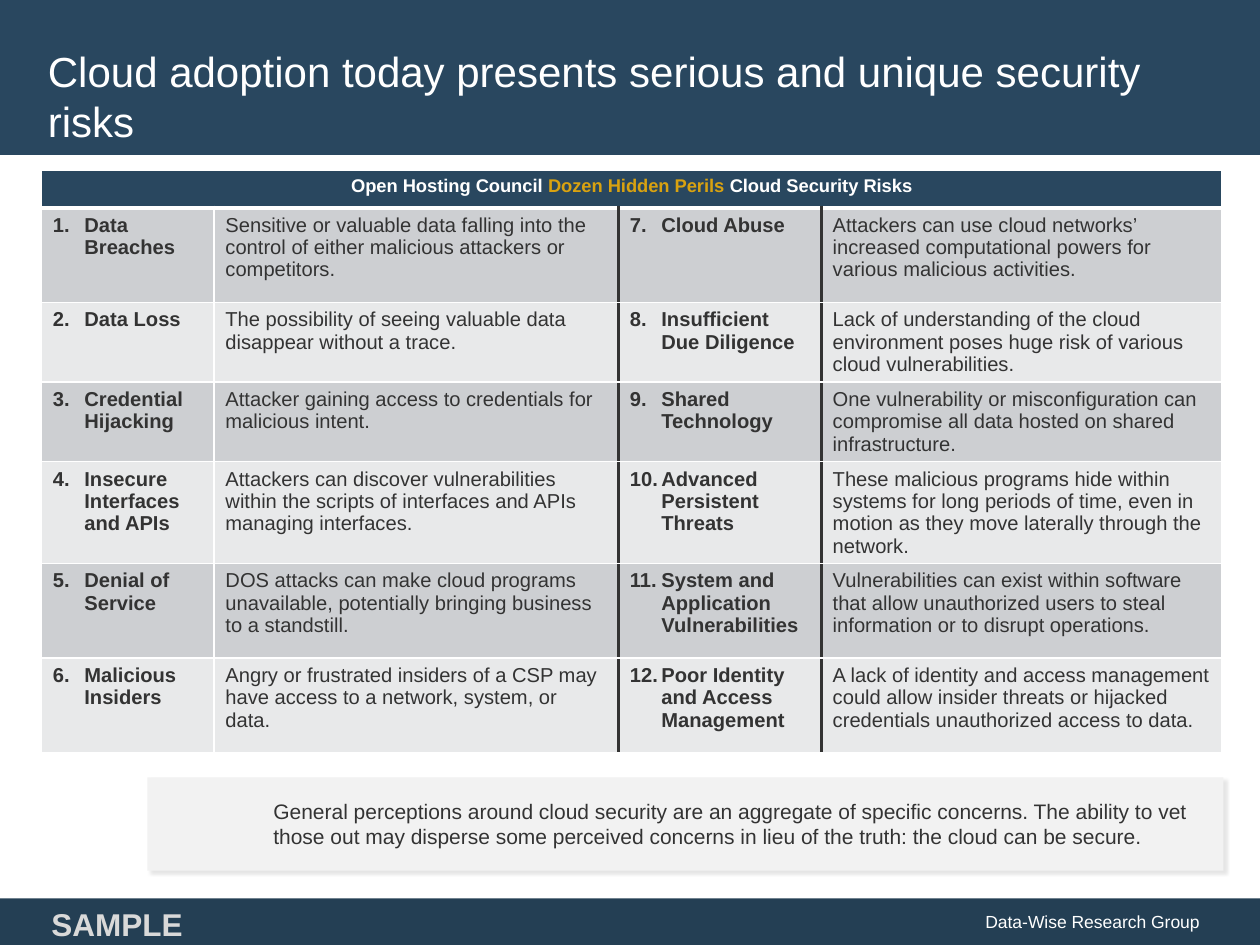
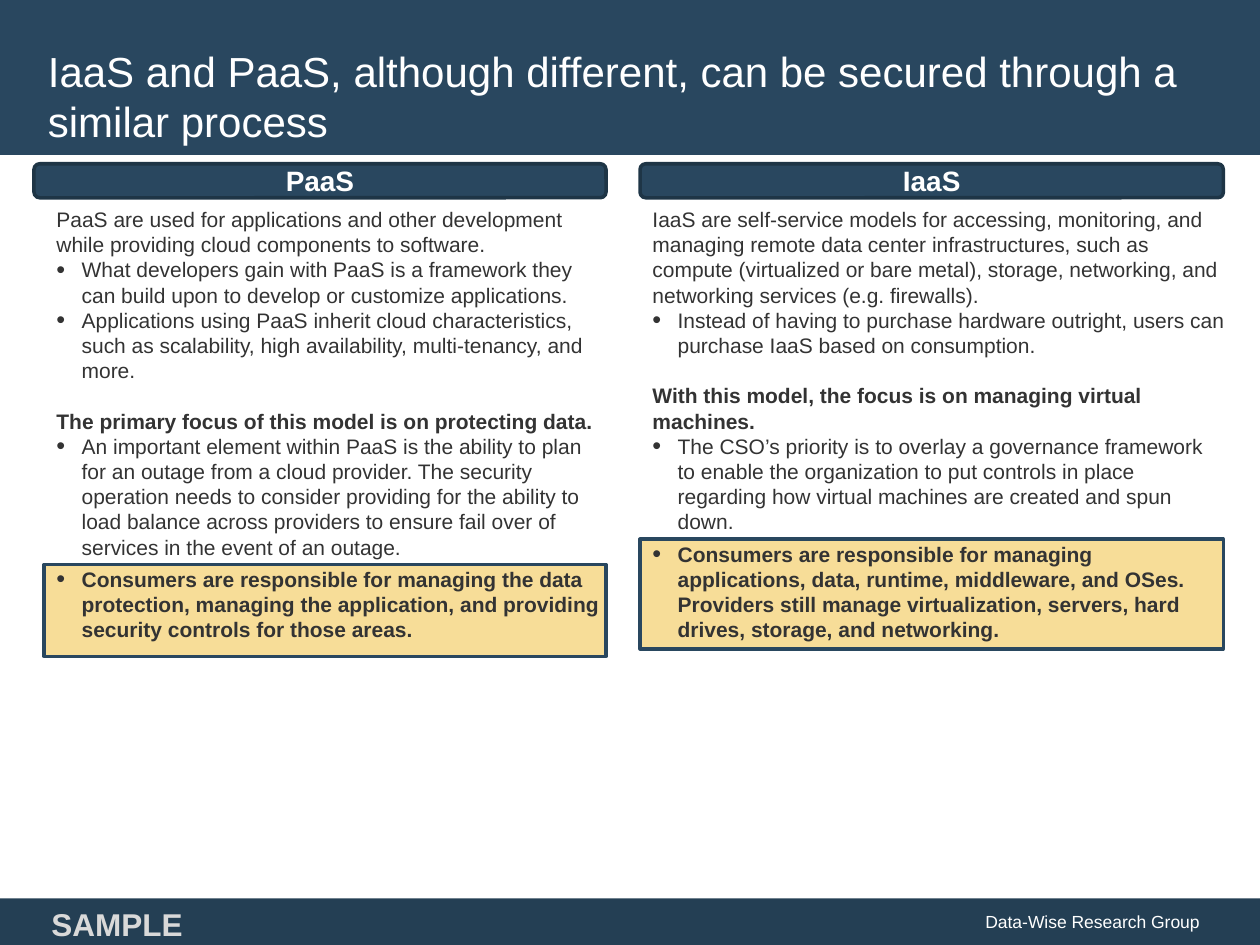
from lxml.etree import SubElement
from pptx import Presentation
from pptx.dml.color import RGBColor
from pptx.enum.shapes import MSO_SHAPE
from pptx.enum.text import MSO_ANCHOR, MSO_AUTO_SIZE, PP_ALIGN
from pptx.oxml import parse_xml
from pptx.oxml.ns import nsdecls, qn
from pptx.util import Inches, Pt

FONT = "Arial"
NAVY = RGBColor(0x29, 0x47, 0x5F)
DEEP = RGBColor(0x24, 0x3F, 0x54)
EDGE = RGBColor(0x1E, 0x35, 0x46)
WHITE = RGBColor(0xFF, 0xFF, 0xFF)
DARK = RGBColor(0x33, 0x33, 0x33)
GOLD = RGBColor(0xD9, 0xA2, 0x10)
SAND = RGBColor(0xF7, 0xDD, 0x98)
PALE = RGBColor(0xF2, 0xF2, 0xF2)
SILVER = RGBColor(0xD9, 0xD9, 0xD9)
BANDS = (RGBColor(0xCD, 0xCF, 0xD2), RGBColor(0xE8, 0xE9, 0xEA))

COLS = (1.37, 3.21, 1.61, 3.18)
ROWS = (0.3, 0.75, 0.54, 0.54, 0.77, 0.75, 0.75)
RISKS = (
    ("Data Breaches", "Sensitive or valuable data falling into the control of either malicious attackers or competitors."),
    ("Data Loss", "The possibility of seeing valuable data disappear without a trace."),
    ("Credential Hijacking", "Attacker gaining access to credentials for malicious intent."),
    ("Insecure Interfaces and APIs", "Attackers can discover vulnerabilities within the scripts of interfaces and APIs managing interfaces."),
    ("Denial of Service", "DOS attacks can make cloud programs unavailable, potentially bringing business to a standstill."),
    ("Malicious Insiders", "Angry or frustrated insiders of a CSP may have access to a network, system, or data."),
    ("Cloud Abuse", "Attackers can use cloud networks’ increased computational powers for various malicious activities."),
    ("Insufficient Due Diligence", "Lack of understanding of the cloud environment poses huge risk of various cloud vulnerabilities."),
    ("Shared Technology", "One vulnerability or misconfiguration can compromise all data hosted on shared infrastructure."),
    ("Advanced Persistent Threats", "These malicious programs hide within systems for long periods of time, even in motion as they move laterally through the network."),
    ("System and Application Vulnerabilities", "Vulnerabilities can exist within software that allow unauthorized users to steal information or to disrupt operations."),
    ("Poor Identity and Access Management", "A lack of identity and access management could allow insider threats or hijacked credentials unauthorized access to data."),
)
ADVICE = "General perceptions around cloud security are an aggregate of specific concerns. The ability to vet those out may disperse some perceived concerns in lieu of the truth: the cloud can be secure."

PAAS = (
    ("lead", "PaaS are used for applications and other development while providing cloud components to software."),
    ("point", "What developers gain with PaaS is a framework they can build upon to develop or customize applications."),
    ("point", "Applications using PaaS inherit cloud characteristics, such as scalability, high availability, multi-tenancy, and more."),
    ("focus", "The primary focus of this model is on protecting data."),
    ("last", "An important element within PaaS is the ability to plan for an outage from a cloud provider. The security operation needs to consider providing for the ability to load balance across providers to ensure fail over of services in the event of an outage."),
    ("duty", "Consumers are responsible for managing the data protection, managing the application, and providing security controls for those areas."),
)
IAAS = (
    ("lead", "IaaS are self-service models for accessing, monitoring, and managing remote data center infrastructures, such as compute (virtualized or bare metal), storage, networking, and networking services (e.g. firewalls)."),
    ("point", "Instead of having to purchase hardware outright, users can purchase IaaS based on consumption."),
    ("focus", "With this model, the focus is on managing virtual machines."),
    ("last", "The CSO’s priority is to overlay a governance framework to enable the organization to put controls in place regarding how virtual machines are created and spun down."),
    ("duty", "Consumers are responsible for managing applications, data, runtime, middleware, and OSes. Providers still manage virtualization, servers, hard drives, storage, and networking."),
)


def inches(box):
    """Turn a box of plain numbers into lengths."""
    return [Inches(side) for side in box]


def style(para, size, color, bold=False, align=PP_ALIGN.LEFT, pitch=1.2):
    """Set the font, line pitch and alignment of a paragraph."""
    font = para.font
    font.name, font.size, font.bold = FONT, Pt(size), bold
    font.color.rgb = color
    para.alignment = align
    para.line_spacing = Pt(round(size * pitch, 2))


def hang(para, depth, tag, **attrs):
    """Give a paragraph a hanging bullet or number."""
    props = para._p.get_or_add_pPr()
    props.set("marL", str(Inches(depth)))
    props.set("indent", str(-Inches(depth)))
    if tag == "a:buChar":
        SubElement(props, qn("a:buSzPct")).set("val", "120000")
        SubElement(props, qn("a:buFont")).set("typeface", FONT)
    mark = SubElement(props, qn(tag))
    for key, value in attrs.items():
        mark.set(key, value)


def panel(slide, box, fill, line=None, kind=MSO_SHAPE.RECTANGLE):
    """Draw a flat filled shape with an optional outline."""
    shape = slide.shapes.add_shape(kind, *inches(box))
    shape.shadow.inherit = False
    shape.fill.solid()
    shape.fill.fore_color.rgb = fill
    if line is None:
        shape.line.fill.background()
    else:
        shape.line.color.rgb = line
        shape.line.width = Pt(2)
    return shape


def write(shape, text, *look, **more):
    """Put one styled, centred-in-height paragraph in a shape."""
    frame = shape.text_frame
    frame.word_wrap = True
    frame.vertical_anchor = MSO_ANCHOR.MIDDLE
    frame.text = text
    style(frame.paragraphs[0], *look, **more)
    return frame


def start(deck, text):
    """Add a slide with the shared title band and footer."""
    slide = deck.slides.add_slide(deck.slide_layouts[5])
    band = panel(slide, (0, 0, 10, 1.23), NAVY)
    slide.shapes._spTree.insert(2, band._element)
    title = slide.shapes.title
    title.left, title.top, title.width, title.height = inches((0.28, 0.28, 9.43, 0.96))
    write(title, text, 24, WHITE).auto_size = MSO_AUTO_SIZE.NONE
    footer(slide, 0, 7.13, 10, 0.37)
    return slide


def footer(slide, left, top, width, height):
    """Draw the footer band with the firm and the sample mark."""
    band = panel(slide, (left, top, width, height), DEEP)
    frame = write(band, "Data-Wise Research Group", 10, WHITE, align=PP_ALIGN.RIGHT)
    frame.margin_right = Inches(0.48)
    mark = slide.shapes.add_textbox(*inches((left + 0.26, top + 0.08, 1.34, 0.24)))
    write(mark, "SAMPLE", 18, SILVER, True, PP_ALIGN.CENTER)


def border(cell, **sides):
    """Draw cell sides L, R, T and B, white unless told otherwise."""
    props = cell._tc.get_or_add_tcPr()
    for spot, side in enumerate("LRTB"):
        color, width = sides.get(side, (WHITE, 1))
        props.insert(spot, parse_xml(
            f'<a:ln{side} {nsdecls("a")} w="{Pt(width)}"><a:solidFill>'
            f'<a:srgbClr val="{color}"/></a:solidFill></a:ln{side}>'))


def paint(cell, fill):
    """Fill a cell and set its side margins."""
    cell.fill.solid()
    cell.fill.fore_color.rgb = fill
    cell.margin_left = cell.margin_right = Inches(0.09)


def risks(slide, left, top):
    """Build the table of twelve risks in two halves."""
    half = len(RISKS) // 2
    box = inches((left, top, sum(COLS), sum(ROWS)))
    table = slide.shapes.add_table(len(ROWS), len(COLS), *box).table
    for col, width in zip(table.columns, COLS):
        col.width = Inches(width)
    for row, height in zip(table.rows, ROWS):
        row.height = Inches(height)
    head = table.cell(0, 0)
    head.merge(table.cell(0, len(COLS) - 1))
    for col in range(len(COLS)):
        paint(table.cell(0, col), NAVY)
        border(table.cell(0, col), B=(WHITE, 3))
    para = head.text_frame.paragraphs[0]
    style(para, 10.5, WHITE, True, PP_ALIGN.CENTER, 1.11)
    for text, color in (("Open Hosting Council ", WHITE), ("Dozen Hidden Perils ", GOLD),
                        ("Cloud Security Risks", WHITE)):
        run = para.add_run()
        run.text = text
        run.font.color.rgb = color
    rule = (DARK, 2.25)
    edges = ({}, {"R": rule}, {"L": rule, "R": rule}, {"L": rule})
    for index, risk in enumerate(RISKS):
        side, row = divmod(index, half)
        for part, text in enumerate(risk):
            col = side * 2 + part
            cell = table.cell(row + 1, col)
            paint(cell, BANDS[row % 2])
            sides = dict(edges[col], T=(WHITE, 1 if row else 3))
            border(cell, **sides)
            cell.text = text
            para = cell.text_frame.paragraphs[0]
            if part == 0:
                hang(para, 0.25, "a:buAutoNum", type="arabicPeriod", startAt=str(index + 1))
            style(para, 11.5, DARK, part == 0, pitch=1.11)


def advice(slide, box):
    """Draw the shaded advice panel with a soft shadow."""
    shape = panel(slide, box, PALE)
    shape._element.spPr.find(qn("a:effectLst")).append(parse_xml(
        f'<a:outerShdw {nsdecls("a")} blurRad="{Pt(2)}" dist="{Pt(2)}" dir="2700000">'
        '<a:srgbClr val="000000"><a:alpha val="10000"/></a:srgbClr></a:outerShdw>'))
    write(shape, ADVICE, 12, DARK).margin_left = Inches(1)


def model(slide, name, notes, head, body, duty):
    """Build one service column: duty box, notes and heading."""
    panel(slide, duty, SAND, NAVY)
    frame = slide.shapes.add_textbox(*inches(body)).text_frame
    frame.word_wrap = True
    for index, (kind, text) in enumerate(notes):
        para = frame.add_paragraph() if index else frame.paragraphs[0]
        para.text = text
        if kind not in ("lead", "focus"):
            hang(para, 0.2, "a:buChar", char="•")
        style(para, 12, DARK, kind in ("focus", "duty"))
        para.space_before = Pt(14.4 if kind == "focus" else 0)
        para.space_after = Pt(4 if kind == "last" else 0)
    plate = panel(slide, head, NAVY, EDGE, MSO_SHAPE.ROUNDED_RECTANGLE)
    frame = write(plate, name, 16, WHITE, True, PP_ALIGN.CENTER)
    frame.margin_top = frame.margin_bottom = 0


def main():
    """Build and save both slides."""
    deck = Presentation()
    deck.slide_width, deck.slide_height = Inches(10), Inches(7.5)
    slide = start(deck, "Cloud adoption today presents serious and unique security risks")
    risks(slide, 0.33, 1.35)
    advice(slide, (1.17, 6.17, 8.54, 0.74))
    slide = start(deck, "IaaS and PaaS, although different, can be secured through a similar process")
    model(slide, "PaaS", PAAS, (0.27, 1.3, 4.54, 0.27), (0.35, 1.59, 4.54, 2.83), (0.35, 4.48, 4.46, 0.73))
    model(slide, "IaaS", IAAS, (5.08, 1.3, 4.63, 0.27), (5.08, 1.59, 4.75, 2.63), (5.08, 4.28, 4.63, 0.87))
    deck.save("out.pptx")


if __name__ == "__main__":
    main()
